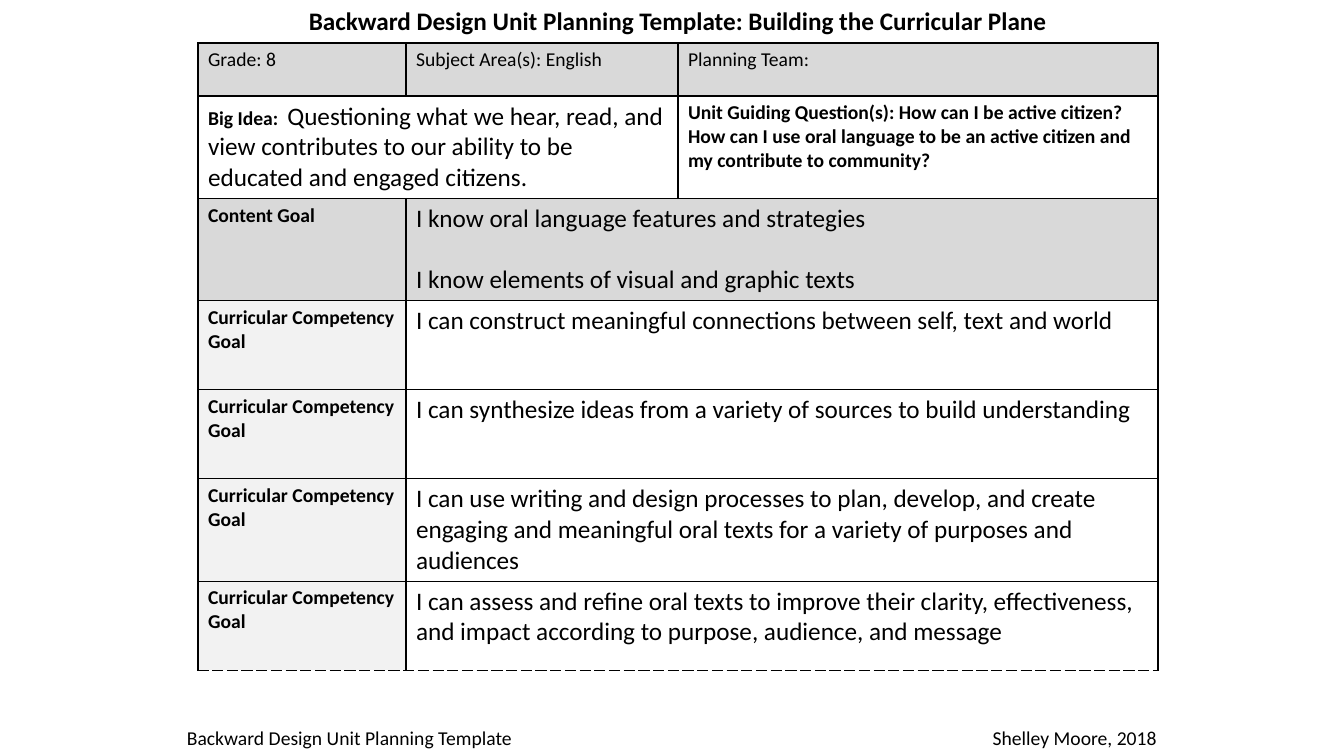
from dataclasses import dataclass

from lxml import etree
from pptx import Presentation
from pptx import util as u
from pptx.dml.color import RGBColor
from pptx.enum import shapes, text
from pptx.oxml import ns

TITLE = "Backward Design Unit Planning Template: Building the Curricular Plane"
FOOTER = "Backward Design Unit Planning Template\tShelley Moore, 2018"
GOAL = "Curricular Competency Goal"
HEADINGS = ["Grade: 8", "Subject Area(s): English", "Planning Team:"]
BIG_IDEA = [
    ("label", "Big Idea:  "),
    ("body", "Questioning what we hear, read, and view contributes to our ability to be educated and engaged citizens."),
]
QUESTION = (
    "Unit Guiding Question(s): How can I be active citizen? "
    "How can I use oral language to be an active citizen and my contribute to community?"
)
CONTENT_GOALS = [
    "I know oral language features and strategies",
    "I know elements of visual and graphic texts",
]
COMPETENCIES = [
    "I can construct meaningful connections between self, text and world",
    "I can synthesize ideas from a variety of sources to build understanding",
    "I can use writing and design processes to plan, develop, and create engaging and meaningful oral texts for a variety of purposes and audiences",
    "I can assess and refine oral texts to improve their clarity, effectiveness, and impact according to purpose, audience, and message",
]


@dataclass(frozen=True)
class Theme:
    font: str = "Calibri"
    ink: str = "000000"
    paper: str = "FFFFFF"
    header: str = "D9D9D9"
    goal: str = "F2F2F2"
    small: int = 14
    large: int = 18
    paragraph_gap: int = 22


THEME = Theme()
STYLES = {
    "plain": (THEME.small, False),
    "label": (THEME.small, True),
    "body": (THEME.large, False),
    "title": (THEME.large, True),
}

ROWS = [
    [(1, THEME.header, [[("plain", heading)]]) for heading in HEADINGS],
    [(2, THEME.paper, [BIG_IDEA]), (1, THEME.paper, [[("label", QUESTION)]])],
    [
        (1, THEME.header, [[("label", "Content Goal")]]),
        (2, THEME.header, [[("body", goal)] for goal in CONTENT_GOALS]),
    ],
] + [
    [(1, THEME.goal, [[("label", GOAL)]]), (2, THEME.paper, [[("body", competency)]])]
    for competency in COMPETENCIES
]

PAGE = (1344, 756)
TABLE_LEFT, TABLE_TOP = 198, 43
COLUMNS = [208, 272, 480]
ROW_HEIGHTS = [53] + [89] * (len(ROWS) - 1)
TITLE_BOX = (TABLE_LEFT, 0, sum(COLUMNS), 40)
FOOTER_BOX = (177, 721, 1000, 34)
FOOTER_TAB = 970
SCALE = 914400 / 100.8


def px(length):
    return u.Emu(round(length * SCALE))


def style_font(font, style):
    size, bold = STYLES[style]
    font.size, font.bold = u.Pt(size), bold


def write(frame, paragraphs):
    frame.word_wrap = True
    for index, spans in enumerate(paragraphs):
        para = frame.add_paragraph() if index else frame.paragraphs[0]
        para.font.name = THEME.font
        para.font.color.rgb = RGBColor.from_string(THEME.ink)
        if index:
            para.space_before = u.Pt(THEME.paragraph_gap)
        for style, words in spans:
            span = para.add_run()
            span.text = words
            style_font(span.font if len(spans) > 1 else para.font, style)


def add_borders(cell, last):
    properties = cell._tc.get_or_add_tcPr()
    for side in "LRTB":
        line = etree.SubElement(properties, ns.qn(f"a:ln{side}"), w=str(u.Pt(1)))
        fill = etree.SubElement(line, ns.qn("a:solidFill"))
        etree.SubElement(fill, ns.qn("a:srgbClr"), val=THEME.ink)
        dash = "sysDash" if last and side == "B" else "solid"
        etree.SubElement(line, ns.qn("a:prstDash"), val=dash)


def paint(target, colour):
    target.fill.solid()
    target.fill.fore_color.rgb = RGBColor.from_string(colour)


def add_plan(page):
    size = px(sum(COLUMNS)), px(sum(ROW_HEIGHTS))
    table = page.shapes.add_table(
        len(ROWS), len(COLUMNS), px(TABLE_LEFT), px(TABLE_TOP), *size
    ).table
    table.first_row = table.horz_banding = False
    for column, width in zip(table.columns, COLUMNS):
        column.width = px(width)
    for row, height in zip(table.rows, ROW_HEIGHTS):
        row.height = px(height)
    for row, entries in enumerate(ROWS):
        column = 0
        for width, colour, paragraphs in entries:
            cells = [table.cell(row, column + offset) for offset in range(width)]
            if width > 1:
                cells[0].merge(cells[-1])
            for cell in cells:
                add_borders(cell, row == len(ROWS) - 1)
                paint(cell, colour)
            write(cells[0].text_frame, paragraphs)
            column += width


def add_title(page):
    box = page.shapes.add_shape(shapes.MSO_SHAPE.RECTANGLE, *map(px, TITLE_BOX))
    box.shadow.inherit = False
    paint(box, THEME.paper)
    box.line.fill.background()
    write(box.text_frame, [[("title", TITLE)]])
    box.text_frame.vertical_anchor = text.MSO_ANCHOR.MIDDLE
    box.text_frame.paragraphs[0].alignment = text.PP_ALIGN.CENTER


def add_footer(page):
    box = page.shapes.add_textbox(*map(px, FOOTER_BOX))
    write(box.text_frame, [[("plain", FOOTER)]])
    properties = box.text_frame.paragraphs[0]._p.get_or_add_pPr()
    stops = etree.Element(ns.qn("a:tabLst"))
    etree.SubElement(stops, ns.qn("a:tab"), pos=str(px(FOOTER_TAB)), algn="r")
    properties.find(ns.qn("a:defRPr")).addprevious(stops)


def main():
    deck = Presentation()
    deck.slide_width, deck.slide_height = map(px, PAGE)
    page = deck.slides.add_slide(deck.slide_layouts[6])
    add_plan(page)
    add_title(page)
    add_footer(page)
    deck.save("out.pptx")


if __name__ == "__main__":
    main()
